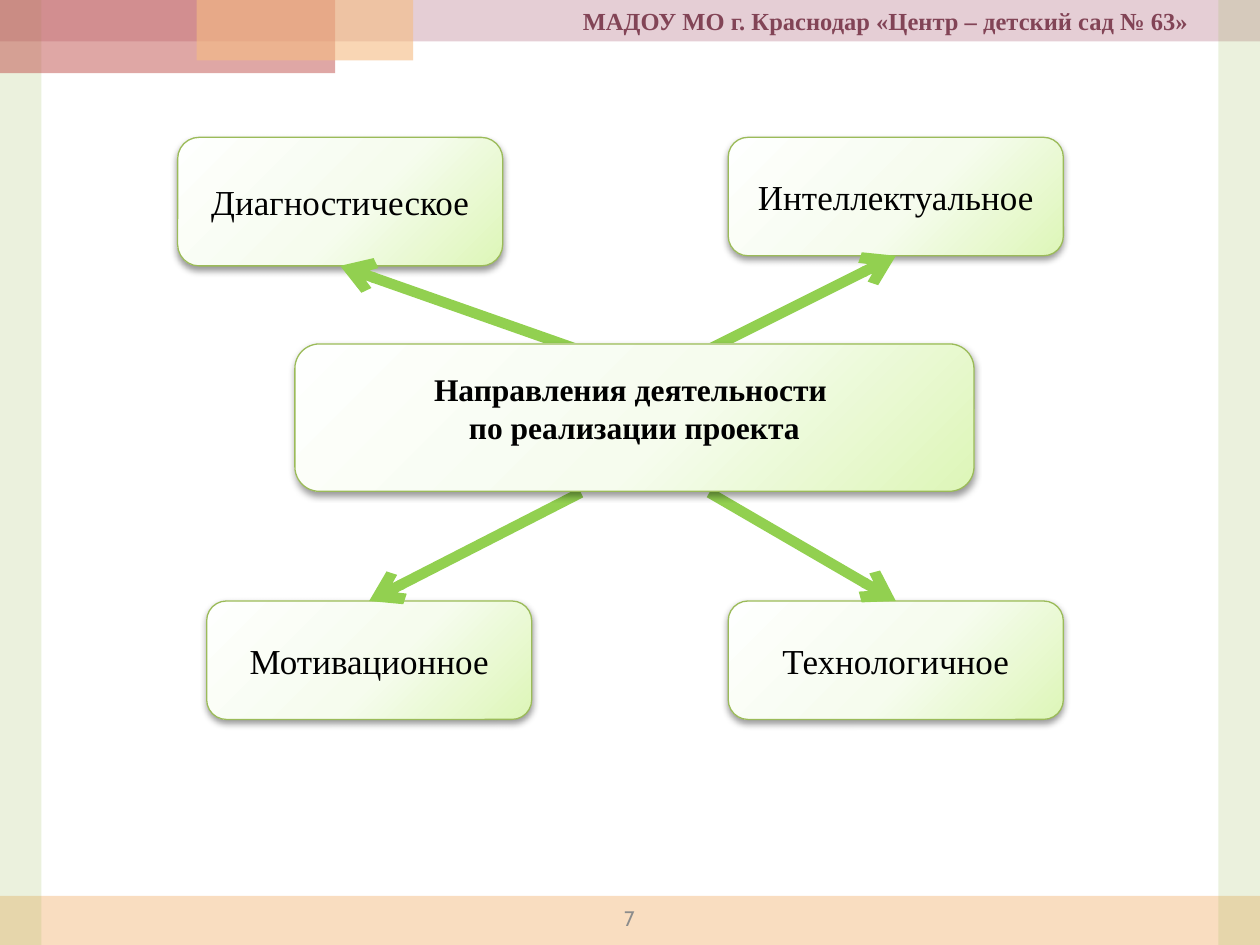
from lxml.etree import SubElement
from pptx import Presentation
from pptx.dml.color import RGBColor
from pptx.enum.shapes import MSO_CONNECTOR, MSO_SHAPE
from pptx.enum.text import MSO_ANCHOR, MSO_AUTO_SIZE, PP_ALIGN
from pptx.oxml import parse_xml
from pptx.oxml.ns import nsdecls, qn
from pptx.util import Inches, Pt

PEACH = RGBColor(0xF5, 0xBC, 0x83)
MAUVE = RGBColor(0xCC, 0x9E, 0xAC)
OLIVE = RGBColor(0x9B, 0xBB, 0x59)
BRICK = RGBColor(0xC0, 0x50, 0x4D)
LIME = RGBColor(0x92, 0xD0, 0x50)
PLUM = RGBColor(0x82, 0x44, 0x56)
GREY = RGBColor(0x8C, 0x8C, 0x8C)
BLACK = RGBColor(0, 0, 0)
GLOW = [(0, RGBColor(0xFE, 0xFF, 0xFE)),
        (55, RGBColor(0xF6, 0xFC, 0xEE)),
        (100, RGBColor(0xDD, 0xF6, 0xB8))]

# The slide is a grid of 100 columns by 75 rows of square cells
COLS, ROWS = 100, 75
CELL = Inches(10) // COLS

deck = Presentation()
deck.slide_width, deck.slide_height = COLS * CELL, ROWS * CELL
slide = deck.slides.add_slide(deck.slide_layouts[6])
shapes = slide.shapes


def write(holder, text, size, color=BLACK, bold=False, font="Times New Roman",
          anchor=MSO_ANCHOR.TOP, grow=False):
    frame = holder.text_frame
    frame.word_wrap = True
    frame.vertical_anchor = anchor
    if grow:
        frame.auto_size = MSO_AUTO_SIZE.SHAPE_TO_FIT_TEXT
    frame.text = text
    for paragraph in frame.paragraphs:
        paragraph.alignment = PP_ALIGN.CENTER
        style = paragraph.runs[0].font
        style.name, style.size, style.bold = font, Pt(size), bold
        style.color.rgb = color


def add_card(*place):
    card = shapes.add_shape(MSO_SHAPE.ROUNDED_RECTANGLE, *[int(n * CELL) for n in place])
    card.fill.solid()
    card.line.color.rgb = OLIVE
    card.line.width = Pt(0.75)
    card.shadow.inherit = False
    stops = "".join(f'<a:gs pos="{pos * 1000}"><a:srgbClr val="{color}"/></a:gs>'
                    for pos, color in GLOW)
    properties = card.element.spPr
    properties.replace(properties.find(qn("a:solidFill")), parse_xml(
        f'<a:gradFill {nsdecls("a")} rotWithShape="1"><a:gsLst>{stops}</a:gsLst>'
        '<a:path path="circle"><a:fillToRect l="-40000" t="-90000" r="140000" b="190000"/>'
        '</a:path></a:gradFill>'))
    properties.find(qn("a:effectLst")).append(parse_xml(
        f'<a:outerShdw {nsdecls("a")} blurRad="{Pt(4)}" dist="{Pt(2)}" dir="5400000" '
        'rotWithShape="0"><a:srgbClr val="000000"><a:alpha val="40000"/></a:srgbClr>'
        '</a:outerShdw>'))
    return card


# Translucent frame: column, row, width, height, colour, opacity in percent
EDGE = 3.3
bands = [
    (0, 71.1, COLS, 3.9, PEACH, 50),
    (0, 0, COLS, EDGE, MAUVE, 50),
    (0, 0, EDGE, ROWS, OLIVE, 20),
    (0, 0, 26.6, 5.8, BRICK, 50),
    (15.6, 0, 17.2, 4.8, PEACH, 60),
    (COLS - EDGE, 0, EDGE, ROWS, OLIVE, 20),
]
for *place, color, opacity in bands:
    band = shapes.add_shape(MSO_SHAPE.RECTANGLE, *[int(n * CELL) for n in place])
    band.shadow.inherit = False
    band.line.fill.background()
    band.fill.solid()
    band.fill.fore_color.rgb = color
    tint = band.element.spPr.find(qn("a:solidFill")).find(qn("a:srgbClr"))
    SubElement(tint, qn("a:alpha"), val=str(opacity * 1000))

# Page number and kindergarten name
page_number = shapes.add_textbox(*[int(n * CELL) for n in (38.3, 71.5, 23.3, 2.7)])
write(page_number, "7", 12, color=GREY, font="Cabin", anchor=MSO_ANCHOR.MIDDLE)
kindergarten = shapes.add_textbox(*[int(n * CELL) for n in (40.6, 0, 59.4, 3.4)])
write(kindergarten, "МАДОУ МО г. Краснодар «Центр – детский сад № 63»", 14,
      color=PLUM, bold=True, grow=True)

# Four directions: name, place, start of its arrow, side the arrow reaches
TOP, BOTTOM = 0, 2
UPPER, LOWER, RIGHT = 10.9, 47.7, 57.8
directions = [
    ("Диагностическое", (14.1, UPPER, 25.8, 10.2), (46.9, 28.1), BOTTOM),
    ("Мотивационное", (16.4, LOWER, 25.8, 9.4), (46.1, 39.1), TOP),
    ("Интеллектуальное", (RIGHT, UPPER, 26.6, 9.4), (55.5, 28.1), BOTTOM),
    ("Технологичное", (RIGHT, LOWER, 26.6, 9.4), (56.3, 39.1), TOP),
]
targets = []
for name, place, start, side in directions:
    direction = add_card(*place)
    write(direction, name, 20, anchor=MSO_ANCHOR.MIDDLE)
    targets.append((direction, start, side))

# Arrows from the hub to the directions
for direction, (column, row), side in targets:
    x, y = int(column * CELL), int(row * CELL)
    arrow = shapes.add_connector(MSO_CONNECTOR.STRAIGHT, x, y, x, y)
    arrow.end_connect(direction, side)
    arrow.line.color.rgb = LIME
    arrow.line.width = Pt(6)
    properties = arrow.element.spPr
    SubElement(properties.find(qn("a:ln")), qn("a:tailEnd"), type="arrow")
    SubElement(properties, qn("a:effectLst"))

# Hub with its title, covering the arrow starts
add_card(23.4, 27.3, 53.9, 11.7)
hub_title = shapes.add_textbox(*[int(n * CELL) for n in (23.4, 28.9, 53.9, 7.1)])
write(hub_title, "Направления деятельности \nпо реализации проекта", 18,
      bold=True, grow=True)

deck.save("out.pptx")
